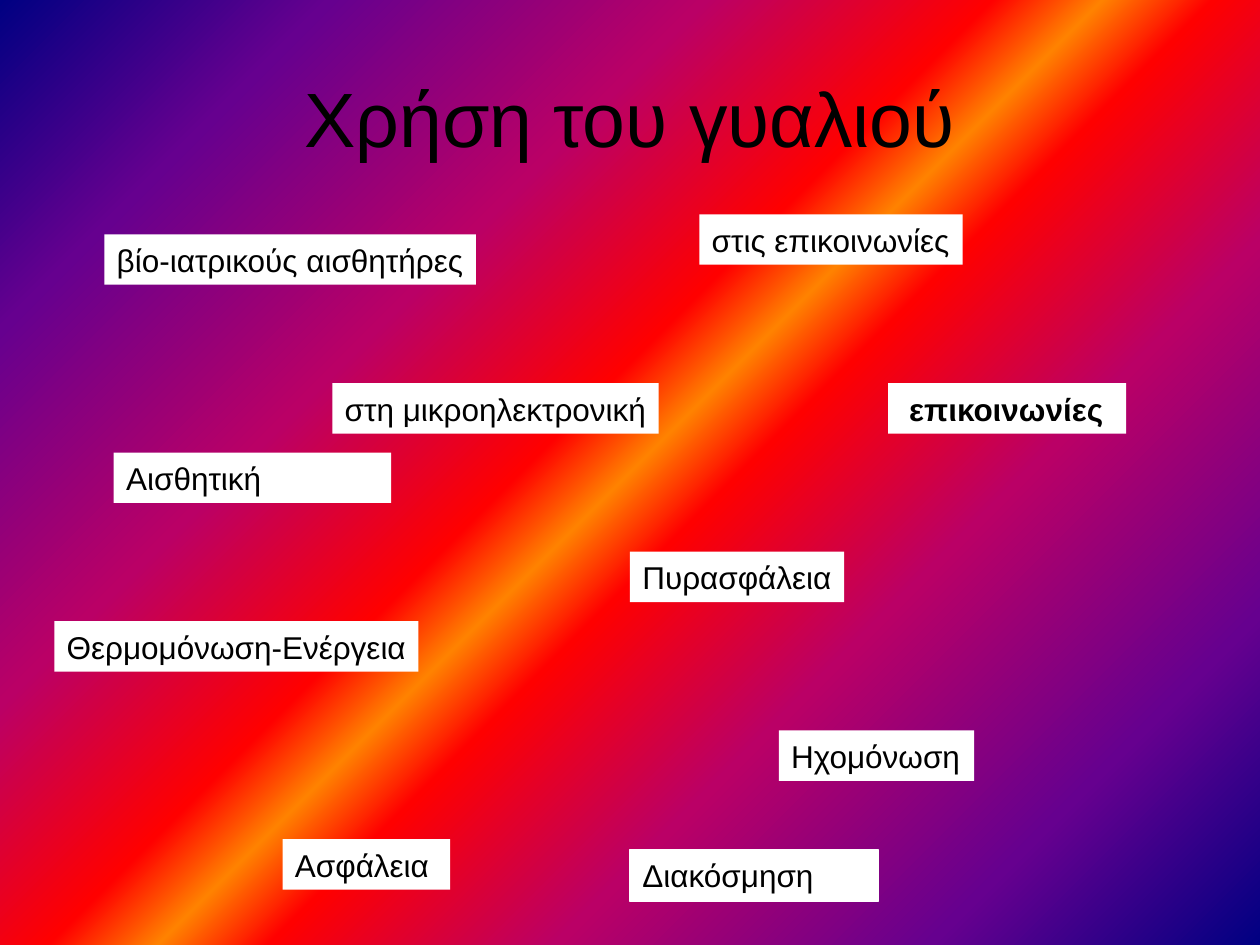
from dataclasses import dataclass

from lxml import etree
from pptx import Presentation
from pptx.dml.color import RGBColor
from pptx.enum.shapes import MSO_SHAPE
from pptx.enum.text import MSO_ANCHOR, MSO_AUTO_SIZE, PP_ALIGN
from pptx.oxml.ns import qn
from pptx.slide import Slide
from pptx.text.text import TextFrame
from pptx.util import Pt

RECTANGLE = MSO_SHAPE.RECTANGLE
TOP, MIDDLE = MSO_ANCHOR.TOP, MSO_ANCHOR.MIDDLE
FIT_SHAPE = MSO_AUTO_SIZE.SHAPE_TO_FIT_TEXT
LEFT, CENTER = PP_ALIGN.LEFT, PP_ALIGN.CENTER
BLANK_LAYOUT = 6


@dataclass(frozen=True)
class Theme:
    font: str = "Arial"
    title_size: int = 44
    label_size: int = 18
    text: str = "000000"
    label_fill: str = "FFFFFF"
    # Mirrored around the middle stop
    half_gradient: tuple = (
        (0, "000082"), (15, "66008F"), (32, "BA0066"), (45, "FF0000"), (50, "FF8200"),
    )


@dataclass(frozen=True)
class Label:
    text: str
    left: float
    top: float
    width: float
    height: float = 28.8
    bold: bool = False
    wrap: bool = False
    outlined: bool = False


THEME = Theme()
LABELS = (
    Label("βίο-ιατρικούς αισθητήρες", 59.6, 133.9, 212.4),
    Label("στις επικοινωνίες", 399.6, 122.5, 150.5),
    Label("στη μικροηλεκτρονική", 189.9, 219, 186.5),
    Label("Ασφάλεια", 161.5, 479.6, 95.8),
    Label("Πυρασφάλεια", 360, 315.3, 122.4),
    Label("Ηχομόνωση", 445, 417.4, 111.6),
    Label("Θερμομόνωση-Ενέργεια", 31, 355, 208.1),
    Label(" επικοινωνίες", 507.5, 219, 136.1, bold=True),
    Label("Διακόσμηση", 360, 485.5, 141.8, 29.5, wrap=True, outlined=True),
    Label("Αισθητική", 65, 258.6, 158.5, wrap=True),
)


def paint_background(slide: Slide) -> None:
    """Fill the slide with a diagonal gradient that mirrors around its middle."""
    fill = slide.background.fill
    fill.gradient()
    fill.gradient_angle = 315
    stop_list = slide.element.find(".//" + qn("a:gsLst"))
    for stop in list(stop_list):
        stop_list.remove(stop)
    half = THEME.half_gradient
    mirrored = [(100 - position, color) for position, color in reversed(half[:-1])]
    for position, color in [*half, *mirrored]:
        stop = etree.SubElement(stop_list, qn("a:gs"), pos=str(position * 1000))
        etree.SubElement(stop, qn("a:srgbClr"), val=color)


def write_text(frame: TextFrame, text: str, size: int, alignment: PP_ALIGN,
               bold: bool = False) -> None:
    para = frame.paragraphs[0]
    para.alignment = alignment
    span = para.add_run()
    span.text = text
    for name, value in {"name": THEME.font, "size": Pt(size), "bold": bold}.items():
        setattr(span.font, name, value)
    span.font.color.rgb = RGBColor.from_string(THEME.text)


def add_title(slide: Slide, text: str) -> None:
    frame = slide.shapes.add_textbox(Pt(36), Pt(21.6), Pt(648), Pt(90)).text_frame
    frame.word_wrap = True
    frame.vertical_anchor = MIDDLE
    write_text(frame, text, THEME.title_size, CENTER)


def add_label(slide: Slide, label: Label) -> None:
    box = slide.shapes.add_shape(
        RECTANGLE, Pt(label.left), Pt(label.top), Pt(label.width), Pt(label.height))
    box.shadow.inherit = False
    color = RGBColor.from_string(THEME.label_fill)
    box.fill.solid()
    box.fill.fore_color.rgb = color
    if label.outlined:
        box.line.color.rgb = color
        box.line.width = Pt(0.75)
    else:
        box.line.fill.background()
    frame_format = {
        "word_wrap": label.wrap,
        "auto_size": FIT_SHAPE,
        "vertical_anchor": TOP if label.wrap else MIDDLE,
    }
    for name, value in frame_format.items():
        setattr(box.text_frame, name, value)
    write_text(box.text_frame, label.text, THEME.label_size, LEFT, label.bold)


def main() -> None:
    deck = Presentation()
    deck.slide_width, deck.slide_height = Pt(720), Pt(540)
    slide = deck.slides.add_slide(deck.slide_layouts[BLANK_LAYOUT])
    paint_background(slide)
    add_title(slide, "Χρήση του γυαλιού")
    for label in LABELS:
        add_label(slide, label)
    deck.save("out.pptx")


if __name__ == "__main__":
    main()
